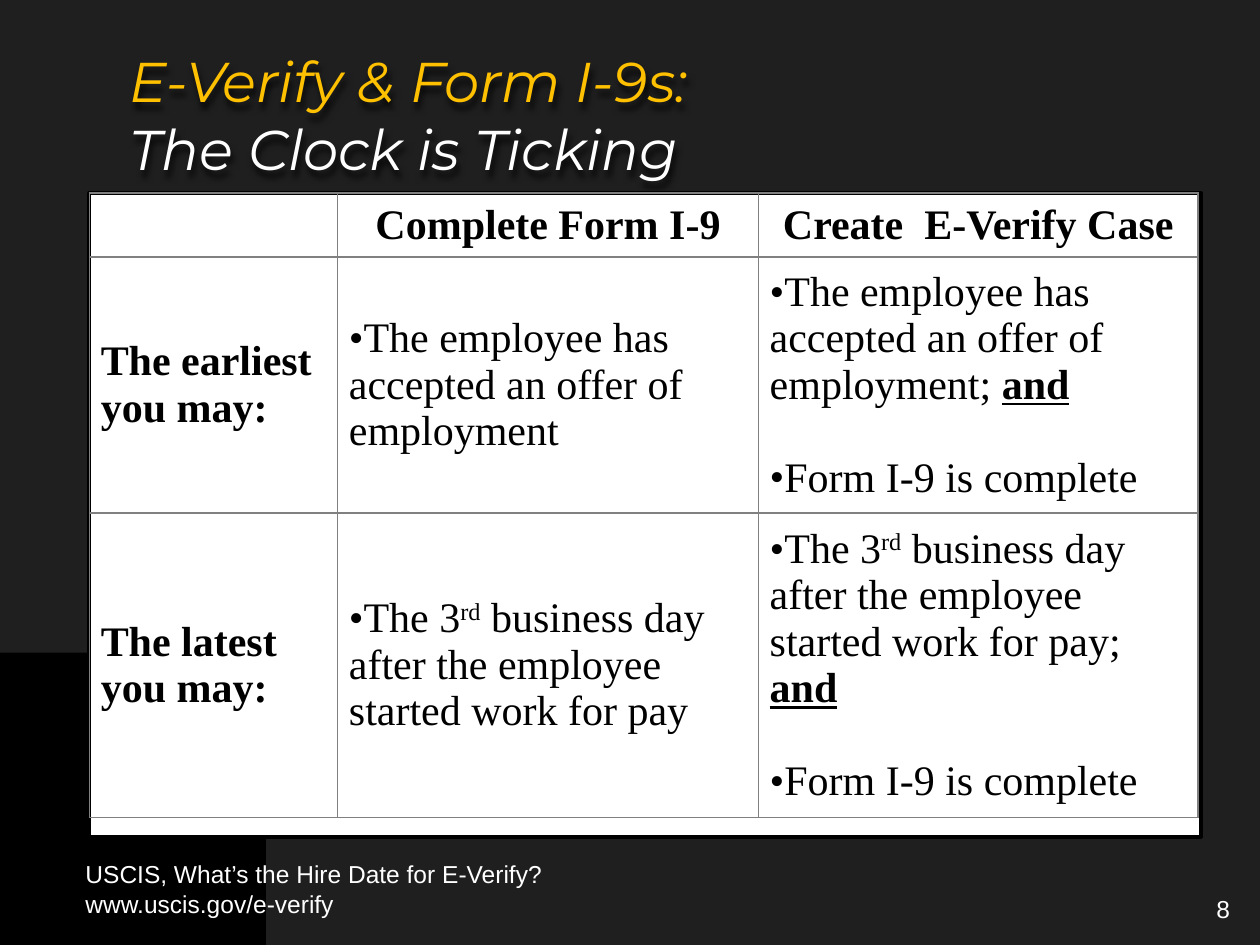
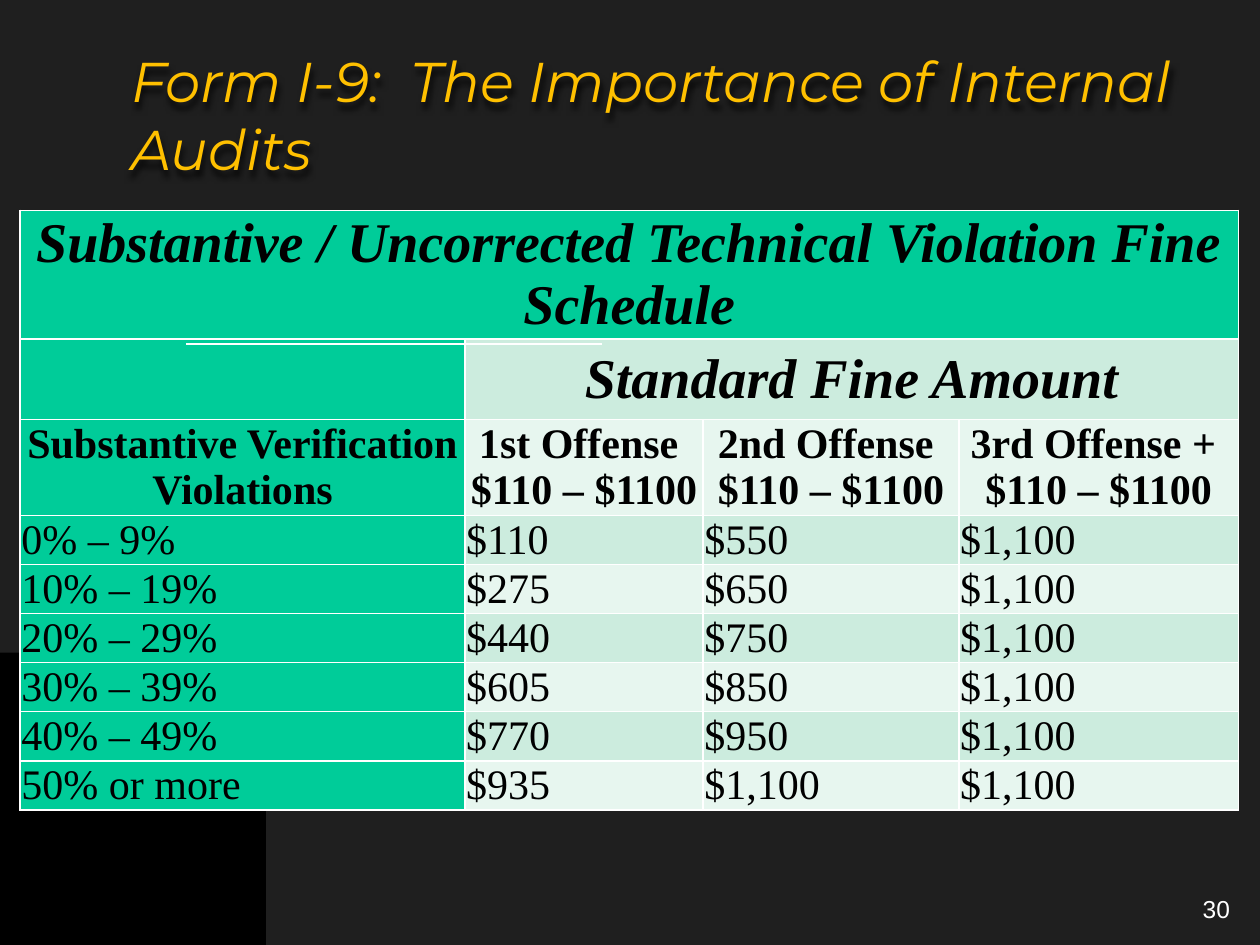
from dataclasses import dataclass

from lxml.etree import SubElement
from pptx import Presentation
from pptx.dml.color import RGBColor
from pptx.enum.shapes import MSO_CONNECTOR as Connector, MSO_SHAPE as Preset
from pptx.enum.text import MSO_ANCHOR as Anchor, MSO_AUTO_SIZE as AutoSize, PP_ALIGN as Align
from pptx.oxml.ns import qn
from pptx.util import Inches, Pt


@dataclass(frozen=True)
class Theme:
    backdrop: str = "808080"
    black: str = "000000"
    white: str = "FFFFFF"
    gold: str = "FFC000"
    gray: str = "808080"
    green: str = "00CC99"
    mint: str = "CCECDE"
    pale_mint: str = "E7F6EF"
    title_font: str = "Montserrat"
    table_font: str = "Times New Roman"
    note_font: str = "Arial"
    large: int = 32
    body: int = 24
    small: int = 14
    table_leading: float = 1.107


THEME = Theme()
TITLE = {"name": THEME.title_font, "size": THEME.large, "color": THEME.gold, "italic": True}
SUBTITLE = TITLE | {"color": THEME.white}
BODY = {"name": THEME.table_font, "size": THEME.body, "color": THEME.black, "bold": False}
BOLD = BODY | {"bold": True}
STRESSED = BOLD | {"underline": True}
RAISED = BODY | {"baseline": 30000}
HEADING = BOLD | {"size": THEME.large, "italic": True}
NOTE = {"name": THEME.note_font, "size": THEME.small, "color": THEME.white}


def inches(values):
    return [Inches(value) for value in values]


# Text
def format_run(run, style):
    for key, value in style.items():
        if key == "color":
            run.font.color.rgb = RGBColor.from_string(value)
        elif key == "baseline":
            run._r.get_or_add_rPr().set("baseline", str(value))
        else:
            setattr(run.font, key, Pt(value) if key == "size" else value)


def fill_paragraph(paragraph, runs, align=Align.LEFT):
    paragraph.alignment = align
    for text, style in runs:
        for number, line in enumerate(text.split("\n")):
            if number:
                paragraph.add_line_break()
            if line:
                run = paragraph.add_run()
                run.text = line
                format_run(run, style)


def add_bullet(paragraph):
    properties = paragraph._p.get_or_add_pPr()
    properties.set("marL", "0")
    properties.set("indent", "0")
    SubElement(properties, qn("a:buFont"), typeface=THEME.table_font)
    SubElement(properties, qn("a:buChar"), char="•")


def fill_frame(frame, paragraphs, align=Align.LEFT, bulleted=False, leading=None):
    for number, runs in enumerate(paragraphs):
        paragraph = frame.add_paragraph() if number else frame.paragraphs[0]
        if leading:
            paragraph.line_spacing = Pt(leading * runs[0][1]["size"])
        if bulleted:
            if number:
                paragraph.space_before = paragraph.line_spacing
            add_bullet(paragraph)
        fill_paragraph(paragraph, runs, align)


def add_note(slide, place, lines, align=Align.LEFT):
    frame = slide.shapes.add_textbox(*inches(place)).text_frame
    frame.word_wrap = True
    fill_frame(frame, [[(line, NOTE)] for line in lines], align)


# Shapes
def add_rectangle(slide, place, color, opacity=None, line=None, width=1):
    shape = slide.shapes.add_shape(Preset.RECTANGLE, *inches(place))
    shape.shadow.inherit = False
    shape.fill.solid()
    shape.fill.fore_color.rgb = RGBColor.from_string(color)
    if opacity:
        tint = shape.element.spPr.find(".//" + qn("a:srgbClr"))
        SubElement(tint, qn("a:alpha")).set("val", str(opacity * 1000))
    if line:
        shape.line.color.rgb = RGBColor.from_string(line)
        shape.line.width = Pt(width)
    else:
        shape.line.fill.background()


def add_rule(slide, left, top, length, color, width):
    rule = slide.shapes.add_connector(Connector.STRAIGHT, *inches((left, top, left + length, top)))
    rule.line.color.rgb = RGBColor.from_string(color)
    rule.line.width = Pt(width)
    SubElement(rule.element.spPr, qn("a:effectLst"))


def add_title_shadow(title):
    effects = SubElement(title.element.spPr, qn("a:effectLst"))
    shadow = SubElement(effects, qn("a:outerShdw"), blurRad="38100", dist="50800",
                        dir="4800000", algn="tl", rotWithShape="0")
    color = SubElement(shadow, qn("a:srgbClr"), val=THEME.black)
    SubElement(color, qn("a:alpha"), val="80000")


def add_page(presentation, title_runs, title_left, number):
    slide = presentation.slides.add_slide(presentation.slide_layouts[5])
    slide.background.fill.solid()
    slide.background.fill.fore_color.rgb = RGBColor.from_string(THEME.backdrop)

    # Two dark veils and the black corner
    for _ in range(2):
        add_rectangle(slide, (0, 0, 10, 7.5), THEME.black, opacity=50)
    add_rectangle(slide, (0, 5.18, 2.11, 2.32), THEME.black)

    # Title, brought in front of the veils
    title = slide.shapes.title
    title.element.getparent().append(title.element)
    title.left, title.top, title.width, title.height = inches((title_left, 0.32, 9, 1.17))
    frame = title.text_frame
    frame.auto_size = AutoSize.NONE
    frame.word_wrap = True
    frame.vertical_anchor = Anchor.MIDDLE
    fill_paragraph(frame.paragraphs[0], title_runs)
    add_title_shadow(title)

    add_note(slide, (8.19, 7.05, 1.67, 0.5), [str(number)], Align.RIGHT)
    return slide


# Tables
def add_grid(slide, left, top, columns, rows, border):
    place = inches((left, top, sum(columns), sum(rows)))
    table = slide.shapes.add_table(len(rows), len(columns), *place).table
    table.first_row = table.horz_banding = False
    for column, width in zip(table.columns, columns):
        column.width = Inches(width)
    for row, height in zip(table.rows, rows):
        row.height = Inches(height)
    for cell in table.iter_cells():
        properties = cell._tc.get_or_add_tcPr()
        for side in ("a:lnL", "a:lnR", "a:lnT", "a:lnB"):
            line = SubElement(properties, qn(side), w=str(Pt(1)))
            SubElement(SubElement(line, qn("a:solidFill")), qn("a:srgbClr"), val=border)
    return table


def fill_cell(cell, paragraphs, margins, color=None, align=Align.LEFT, bulleted=False):
    cell.vertical_anchor = Anchor.MIDDLE
    sides = ("margin_left", "margin_top", "margin_right", "margin_bottom")
    for side, margin in zip(sides, margins):
        setattr(cell, side, Inches(margin))
    if color:
        cell.fill.solid()
        cell.fill.fore_color.rgb = RGBColor.from_string(color)
    else:
        cell.fill.background()
    fill_frame(cell.text_frame, paragraphs, align, bulleted, THEME.table_leading)


def add_deadline_table(slide):
    accepted = "The employee has accepted an offer of employment"
    third_day = [("The 3", BODY), ("rd", RAISED)]
    started = " business day after the employee started work for pay"
    form_done = [("Form I-9 is complete", BODY)]
    rows = [
        [[], [[("Complete Form I-9", BOLD)]], [[("Create  E-Verify Case", BOLD)]]],
        [[[("The earliest you may:", BOLD)]],
         [[(accepted, BODY)]],
         [[(accepted + "; ", BODY), ("and", STRESSED)], form_done]],
        [[[("The latest you may:", BOLD)]],
         [third_day + [(started, BODY)]],
         [third_day + [(started + "; ", BODY), ("and", STRESSED)], form_done]],
    ]
    table = add_grid(slide, 0.71, 1.53, (1.97, 3.34, 3.49), (0.51, 2.03, 2.42), THEME.gray)
    for row, contents in enumerate(rows):
        for column, paragraphs in enumerate(contents):
            fill_cell(table.cell(row, column), paragraphs, (0.09, 0.05, 0.09, 0.05),
                      align=Align.LEFT if row else Align.CENTER,
                      bulleted=row > 0 and column > 0)


def add_fine_table(slide):
    fine_range = "\n$110 – $1100"
    rows = [
        ["Substantive / Uncorrected Technical Violation Fine Schedule", "", "", ""],
        ["", "Standard Fine Amount", "", ""],
        ["Substantive Verification Violations"]
        + [offense + fine_range for offense in ("1st Offense ", "2nd Offense ", "3rd Offense + ")],
        ["0% – 9%", "$110", "$550", "$1,100"],
        ["10% – 19%", "$275", "$650", "$1,100"],
        ["20% – 29%", "$440", "$750", "$1,100"],
        ["30% – 39%", "$605", "$850", "$1,100"],
        ["40% – 49%", "$770", "$950", "$1,100"],
        ["50% or more", "$935", "$1,100", "$1,100"],
    ]
    heights = [1.02, 0.64, 0.76] + [0.39] * 6
    table = add_grid(slide, 0.16, 1.67, (3.53, 1.89, 2.03, 2.22), heights, THEME.white)
    table.cell(0, 0).merge(table.cell(0, 3))
    table.cell(1, 1).merge(table.cell(1, 3))
    styles = [HEADING, HEADING, BOLD] + [BODY] * 6
    for row, (texts, style) in enumerate(zip(rows, styles)):
        band = THEME.mint if row % 2 else THEME.pale_mint
        for column, text in enumerate(texts):
            fill_cell(table.cell(row, column), [[(text, style)]], [0.01] * 4,
                      color=THEME.green if row == 0 or column == 0 else band,
                      align=Align.CENTER if row < 3 else Align.LEFT)


def main():
    presentation = Presentation()
    presentation.slide_width, presentation.slide_height = inches((10, 7.5))

    # Deadlines
    title = [("E-Verify & Form I-9s:\n", TITLE), ("The Clock is Ticking", SUBTITLE)]
    slide = add_page(presentation, title, 0.93, 8)
    add_rectangle(slide, (0.71, 1.53, 8.82, 5.11), THEME.white, line=THEME.black, width=2.25)
    add_deadline_table(slide)
    add_note(slide, (0.58, 6.77, 9.4, 0.57),
             ["USCIS, What’s the Hire Date for E-Verify?", "www.uscis.gov/e-verify"])

    # Fines
    title = [("Form I-9:  The Importance of Internal Audits", TITLE)]
    slide = add_page(presentation, title, 0.94, 30)
    add_fine_table(slide)
    add_rule(slide, 1.48, 2.73, 3.3, THEME.white, 0.75)

    presentation.save("out.pptx")


if __name__ == "__main__":
    main()
